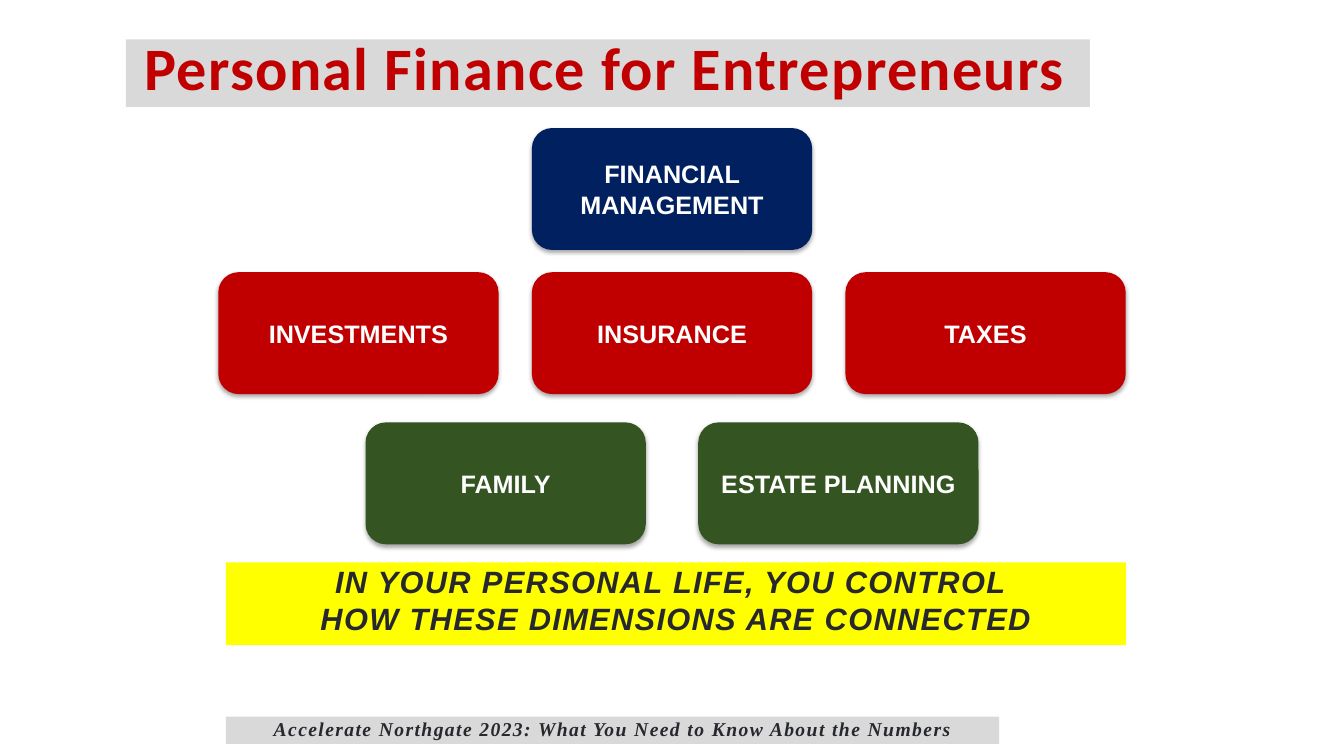
"""Builds the Personal Finance for Entrepreneurs slide."""
from lxml import etree
from pptx import Presentation
from pptx.dml.color import RGBColor
from pptx.enum import shapes, text
from pptx.oxml.ns import qn
from pptx.util import Inches, Pt

THEME = {
    "navy": "002060", "red": "C00000", "green": "345522", "yellow": "FFFF00",
    "gray": "D9D9D9", "ink": "26282D", "white": "FFFFFF", "shadow": "000000",
    "card": {"name": "Arial", "size": Pt(18), "bold": True},
    "message": {"name": "Arial", "size": Pt(22), "bold": True, "italic": True},
    "footer": {"name": "Times New Roman", "size": Pt(14), "bold": True, "italic": True},
    "title": {"name": "Calibri", "size": Pt(43), "bold": True},
}
SLIDE_WIDTH, SLIDE_HEIGHT = 13.33, 7.5
CARD_WIDTH, CARD_HEIGHT = 2.78, 1.21

CARD_ROWS = [
    {"top": 1.27, "gap": 0, "fill": "navy", "topics": ["FINANCIAL MANAGEMENT"]},
    {"top": 2.7, "gap": 0.33, "fill": "red", "topics": ["INVESTMENTS", "INSURANCE", "TAXES"]},
    {"top": 4.19, "gap": 0.52, "fill": "green", "topics": ["FAMILY", "ESTATE PLANNING"]},
]
BANNERS = [
    {"words": "IN YOUR PERSONAL LIFE, YOU CONTROL \vHOW THESE DIMENSIONS ARE CONNECTED",
     "place": (2.24, 5.58, 8.93, 0.82), "fill": "yellow", "style": "message", "color": "ink",
     "align": "CENTER", "inset": (0, 0), "spacing": 1.0},
    {"words": "Accelerate Northgate 2023: What You Need to Know About the Numbers",
     "place": (2.24, 7.11, 7.67, 0.27), "fill": "gray", "style": "footer", "color": "ink",
     "align": "CENTER", "inset": (0, 0.05), "spacing": 0.8},
    {"words": "Personal Finance for Entrepreneurs",
     "place": (1.25, 0.39, 9.56, 0.67), "fill": "gray", "style": "title", "color": "red",
     "align": "LEFT", "inset": (0.18, 0.05), "spacing": 0.8},
]


def rgb(color):
    return RGBColor.from_string(THEME[color])


def add_panel(slide, outline, place, fill, words, style, color, align="CENTER"):
    panel = slide.shapes.add_shape(outline, *map(Inches, place))
    panel.shadow.inherit = False
    panel.fill.solid()
    panel.fill.fore_color.rgb = rgb(fill)
    panel.line.fill.background()
    panel.text_frame.word_wrap = True
    panel.text_frame.text = words
    paragraph = panel.text_frame.paragraphs[0]
    paragraph.alignment = text.PP_ALIGN[align]
    for run in paragraph.runs:
        for attribute, value in THEME[style].items():
            setattr(run.font, attribute, value)
        run.font.color.rgb = rgb(color)
    return panel


def add_soft_shadow(card):
    effects = card._element.spPr.find(qn("a:effectLst"))
    shadow = etree.SubElement(effects, qn("a:outerShdw"), blurRad=str(Pt(3.1)),
                              dist=str(Pt(1.8)), dir="5400000", rotWithShape="0")
    tint = etree.SubElement(shadow, qn("a:srgbClr"), val=THEME["shadow"])
    etree.SubElement(tint, qn("a:alpha"), val="35000")


def add_card_row(slide, row):
    pitch = CARD_WIDTH + row["gap"]
    row_width = pitch * len(row["topics"]) - row["gap"]
    left = (SLIDE_WIDTH - row_width) / 2
    for column, topic in enumerate(row["topics"]):
        place = (left + column * pitch, row["top"], CARD_WIDTH, CARD_HEIGHT)
        card = add_panel(slide, shapes.MSO_SHAPE.ROUNDED_RECTANGLE, place, row["fill"],
                         topic, "card", "white")
        card.text_frame.vertical_anchor = text.MSO_ANCHOR.MIDDLE
        add_soft_shadow(card)


def add_banner(slide, banner):
    panel = add_panel(slide, shapes.MSO_SHAPE.RECTANGLE, banner["place"], banner["fill"],
                      banner["words"], banner["style"], banner["color"], banner["align"])
    frame = panel.text_frame
    frame.vertical_anchor = text.MSO_ANCHOR.TOP
    frame.margin_right = frame.margin_bottom = 0
    frame.margin_left, frame.margin_top = map(Inches, banner["inset"])
    paragraph = frame.paragraphs[0]
    paragraph.line_spacing = banner["spacing"]
    for run in paragraph.runs:
        run.font._element.set("spc", "100")


def main():
    deck = Presentation()
    deck.slide_width, deck.slide_height = Inches(SLIDE_WIDTH), Inches(SLIDE_HEIGHT)
    slide = deck.slides.add_slide(deck.slide_layouts[6])
    for row in CARD_ROWS:
        add_card_row(slide, row)
    for banner in BANNERS:
        add_banner(slide, banner)
    deck.save("out.pptx")


if __name__ == "__main__":
    main()
